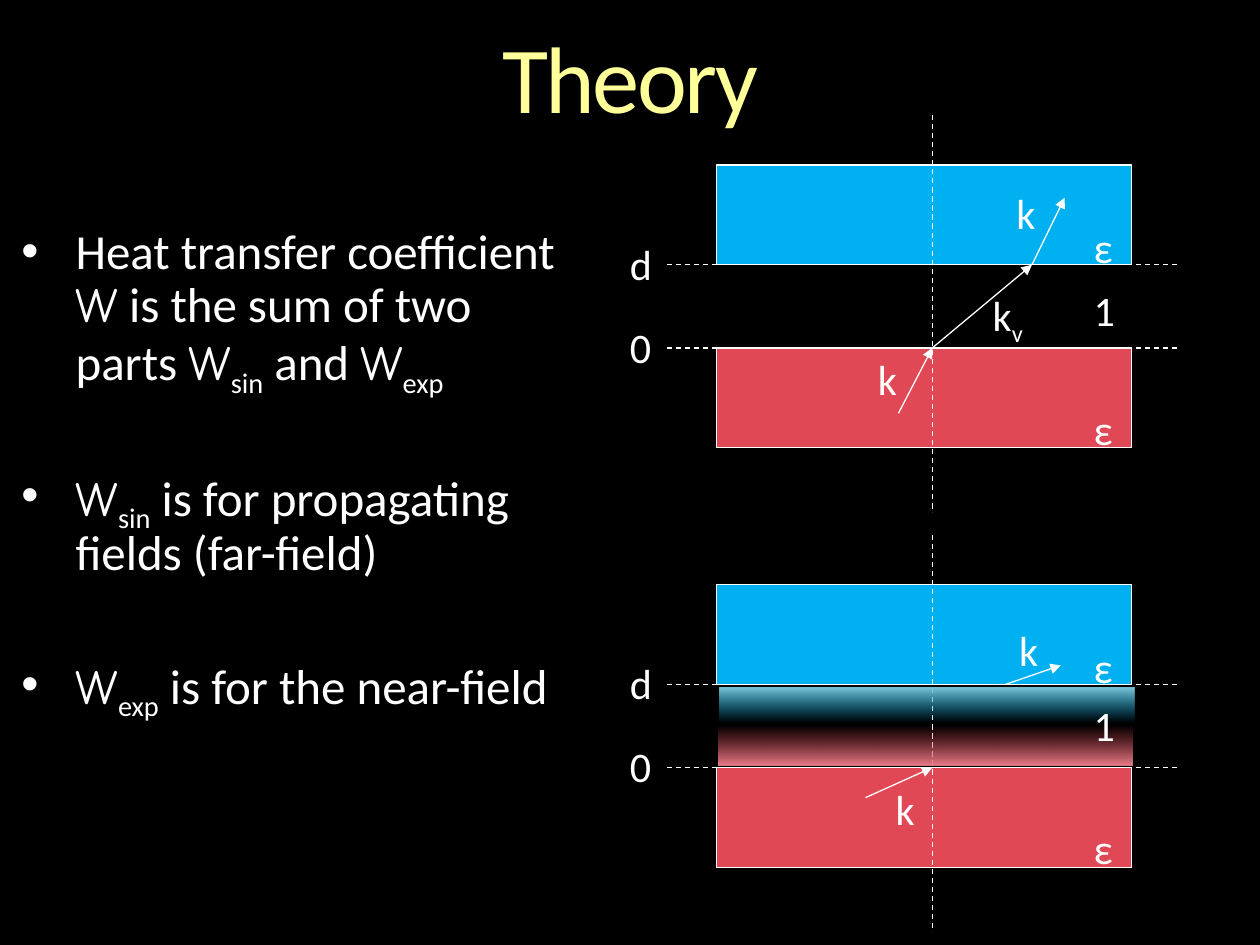
from lxml.etree import SubElement
from pptx import Presentation
from pptx.dml.color import RGBColor
from pptx.enum.dml import MSO_LINE_DASH_STYLE as DASH
from pptx.enum.shapes import MSO_CONNECTOR, MSO_SHAPE
from pptx.enum.text import PP_ALIGN
from pptx.oxml.ns import qn
from pptx.util import Pt

BLACK = RGBColor(0x00, 0x00, 0x00)
WHITE = RGBColor(0xFF, 0xFF, 0xFF)
YELLOW = RGBColor(0xFF, 0xFF, 0x99)
BLUE = RGBColor(0x00, 0xB0, 0xF0)
RED = RGBColor(0xE0, 0x48, 0x56)
PALE_BLUE = RGBColor(0x7C, 0xC6, 0xD8)
PALE_RED = RGBColor(0xE9, 0x7F, 0x89)

TEXT, SYMBOL = "Calibri", "Comic Neue"
W = ("W", SYMBOL, False)
SIN = ("sin", TEXT, True)
EXP = ("exp", TEXT, True)

BULLETS = [
    [("Heat transfer coefficient ", TEXT, False), W,
     (" is the sum of two parts ", TEXT, False), W, SIN,
     (" and ", TEXT, False), W, EXP],
    [W, SIN, (" is for propagating fields (far-field)", TEXT, False)],
    [W, EXP, (" is for the near-field", TEXT, False)],
]

SLAB_LEFT, SLAB_WIDTH, SLAB_HEIGHT, GAP = 409.6, 236.9, 57, 47.5
UPPER_FACE, LOWER_FACE = SLAB_HEIGHT, SLAB_HEIGHT + GAP
AXIS_X, AXIS_OVERHANG, AXIS_LENGTH = 532.8, 28.5, 227
FACE_LEFT, FACE_RIGHT = 380.9, 674.6
LABEL_HEIGHT = 36

COMMON_LABELS = [
    ("0", "", 352.8, 85.7, 38), ("d", "", 352.8, 38.2, 38),
    ("ε", "", 617.8, 28.8, 47.5), ("ε", "", 617.8, 132.5, 47.5),
]
PANELS = [
    {"top": 94.3,
     "labels": [("1", "", 617.8, 64.8, 47.5), ("k", "", 573.8, 9.4, 47.5),
                ("k", "", 494.6, 104.4, 47.5), ("k", "v", 560.2, 67.7, 47.5)],
     "arrows": [(513.4, 141.9, AXIS_X, LOWER_FACE),
                (589.7, UPPER_FACE, 608.4, 18.7),
                (AXIS_X, LOWER_FACE, 589.7, UPPER_FACE)],
     "glows": []},
    {"top": 334.1,
     "labels": [("1", "", 617.8, 61.9, 47.5), ("k", "", 575.3, 19.4, 47.5),
                ("k", "", 504.7, 110.2, 47.5)],
     "arrows": [(494.6, 121.7, AXIS_X, LOWER_FACE),
                (574.6, UPPER_FACE, 606.2, 46.1)],
     "glows": [(410.4, 57, 46.1, [(0.5, RED, True), (1, PALE_RED, False)]),
               (411.1, 59, 43.9, [(0, PALE_BLUE, False), (0.46, BLUE, True)])]},
]


def apply(target, values):
    for name, value in values.items():
        setattr(target, name, value)


def add_run(paragraph, text, size, name=TEXT, subscript=False, color=WHITE):
    run = paragraph.add_run()
    run.text = text
    apply(run.font, {"size": Pt(size), "name": name})
    run.font.color.rgb = color
    if subscript:
        run.font._element.set("baseline", "-25000")
    return run


def add_text_frame(slide, left, top, width, height, inset=None):
    box = slide.shapes.add_textbox(Pt(left), Pt(top), Pt(width), Pt(height))
    frame = box.text_frame
    frame.word_wrap = True
    if inset is not None:
        apply(frame, {f"margin_{side}": Pt(inset)
                      for side in ("left", "top", "right", "bottom")})
    return frame


def add_title(slide):
    paragraph = add_text_frame(slide, 200.9, 18, 318.2, 59, 0).paragraphs[0]
    apply(paragraph, {"alignment": PP_ALIGN.CENTER, "line_spacing": 0.9})
    run = add_run(paragraph, "Theory", 54, color=YELLOW)
    run.font._element.set("spc", "-150")


def add_bullets(slide):
    frame = add_text_frame(slide, 12.2, 129.6, 318.2, 271.4, 0)
    for index, parts in enumerate(BULLETS):
        paragraph = frame.add_paragraph() if index else frame.paragraphs[0]
        properties = paragraph._p.get_or_add_pPr()
        properties.set("marL", str(Pt(31)))
        properties.set("indent", str(Pt(-31)))
        SubElement(properties, qn("a:buFont")).set("typeface", "Arial")
        SubElement(properties, qn("a:buChar")).set("char", "•")
        paragraph.line_spacing = 0.9
        if index:
            paragraph.space_before = Pt(43)
        for text, name, subscript in parts:
            add_run(paragraph, text, 28, name, subscript)


def add_block(slide, left, top, height):
    block = slide.shapes.add_shape(
        MSO_SHAPE.RECTANGLE, Pt(left), Pt(top), Pt(SLAB_WIDTH), Pt(height))
    block.shadow.inherit = False
    return block


def add_slab(slide, top, color):
    slab = add_block(slide, SLAB_LEFT, top, SLAB_HEIGHT)
    slab.fill.solid()
    slab.fill.fore_color.rgb = color
    slab.line.color.rgb = WHITE
    slab.line.width = Pt(0.75)


def add_glow(slide, left, top, height, stops):
    glow = add_block(slide, left, top, height)
    glow.line.fill.background()
    glow.fill.gradient()
    glow.fill.gradient_angle = 270
    for stop, (position, color, clear) in zip(glow.fill.gradient_stops, stops):
        stop.position = position
        stop.color.rgb = color
    colors = glow._element.xpath(".//a:gs/a:srgbClr")
    for element, (position, color, clear) in zip(colors, stops):
        if clear:
            SubElement(element, qn("a:alpha")).set("val", "0")


def add_line(slide, x1, y1, x2, y2, arrow=False):
    line = slide.shapes.add_connector(
        MSO_CONNECTOR.STRAIGHT, Pt(x1), Pt(y1), Pt(x2), Pt(y2))
    line.line.color.rgb = WHITE
    line.line.width = Pt(0.75)
    if arrow:
        SubElement(line.line._get_or_add_ln(), qn("a:tailEnd")).set("type", "triangle")
    else:
        line.line.dash_style = DASH.DASH
    SubElement(line._element.spPr, qn("a:effectLst"))


def add_panel(slide, panel):
    top = panel["top"]
    add_slab(slide, top, BLUE)
    add_slab(slide, top + LOWER_FACE, RED)
    axis_top = top - AXIS_OVERHANG
    add_line(slide, AXIS_X, axis_top, AXIS_X, axis_top + AXIS_LENGTH)
    for face in (LOWER_FACE, UPPER_FACE):
        add_line(slide, FACE_LEFT, top + face, FACE_RIGHT, top + face)
    for x1, y1, x2, y2 in panel["arrows"]:
        add_line(slide, x1, top + y1, x2, top + y2, arrow=True)
    for left, offset, height, stops in panel["glows"]:
        add_glow(slide, left, top + offset, height, stops)
    for text, subscript, left, offset, width in COMMON_LABELS + panel["labels"]:
        frame = add_text_frame(slide, left, top + offset, width, LABEL_HEIGHT)
        add_run(frame.paragraphs[0], text, 24)
        if subscript:
            add_run(frame.paragraphs[0], subscript, 24, subscript=True)


def main():
    presentation = Presentation()
    apply(presentation, {"slide_width": Pt(720), "slide_height": Pt(540)})
    slide = presentation.slides.add_slide(presentation.slide_layouts[6])
    slide.background.fill.solid()
    slide.background.fill.fore_color.rgb = BLACK
    add_title(slide)
    add_bullets(slide)
    for panel in PANELS:
        add_panel(slide, panel)
    presentation.save("out.pptx")


if __name__ == "__main__":
    main()
